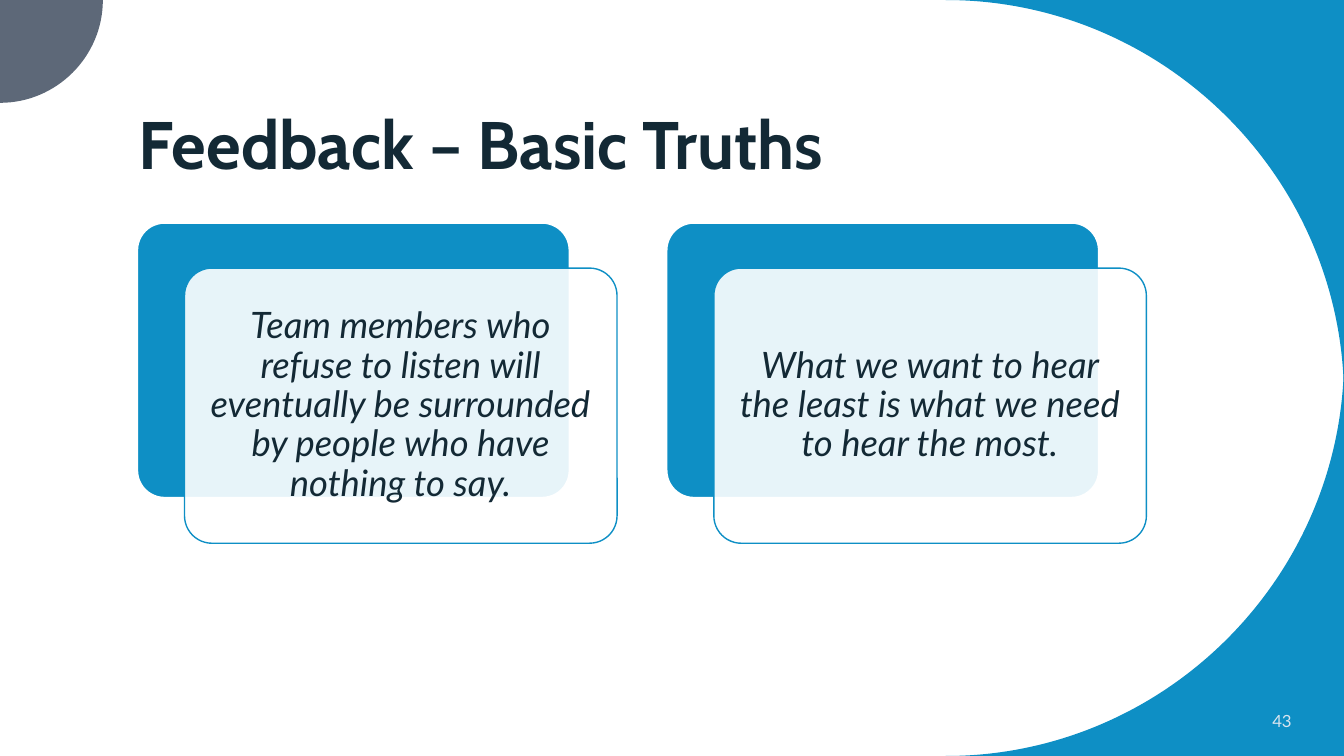
from lxml import etree
from pptx import Presentation
from pptx.dml import color
from pptx.enum import shapes, text
from pptx.oxml import ns
from pptx.util import Inches, Pt

BLUE, GREY, NAVY, PALE, WHITE = "0E8FC5", "5D6878", "132935", "DAE5EF", "FFFFFF"
WIDE, HIGH = 13.33, 7.5
BEND = 0.55
TRUTHS = [
    "Team members who refuse to listen will eventually be surrounded "
    "by people who have nothing to say.",
    "What we want to hear the least is what we need to hear the most.",
]


def rgb(code):
    return color.RGBColor.from_string(code)


def assign(item, values):
    for name, value in values.items():
        setattr(item, name, value)


def paint(shape, code):
    shape.shadow.inherit = False
    shape.fill.solid()
    shape.fill.fore_color.rgb = rgb(code)


def add_arc(slide, corner, first, last, peak, code):
    def point(spot):
        return tuple(map(Inches, spot))

    def pull(end):
        return point(e + BEND * (p - e) for e, p in zip(end, peak))

    draft = slide.shapes.build_freeform(*point(corner))
    draft.add_line_segments([point(first), point(last)], close=True)
    shape = draft.convert_to_shape()
    paint(shape, code)
    shape.line.fill.background()

    side = shape._element.findall(".//" + ns.qn("a:lnTo"))[1]
    side.tag = ns.qn("a:cubicBezTo")
    for place, (x, y) in enumerate((pull(first), pull(last))):
        spot = etree.Element(ns.qn("a:pt"), x=str(x - shape.left), y=str(y - shape.top))
        side.insert(place, spot)


def add_panel(slide, box, code, edge, width, alpha=100):
    shape = slide.shapes.add_shape(
        shapes.MSO_SHAPE.ROUNDED_RECTANGLE, *map(Inches, box))
    shape.adjustments[0] = 0.1
    paint(shape, code)
    shape.line.color.rgb = rgb(edge)
    shape.line.width = Pt(width)
    if alpha < 100:
        tint = shape._element.spPr.find(ns.qn("a:solidFill"))[0]
        etree.SubElement(tint, ns.qn("a:alpha"), val=str(alpha * 1000))


def add_words(slide, box, words, frame, para, font, code):
    body = slide.shapes.add_textbox(*map(Inches, box)).text_frame
    assign(body, {"word_wrap": True, **frame})
    line = body.paragraphs[0]
    assign(line, para)
    run = line.add_run()
    run.text = words
    assign(run.font, font)
    run.font.color.rgb = rgb(code)


def add_card(slide, left, words):
    top, width, height = 2.21, 4.29, 2.73
    add_panel(slide, (left, top, width, height), BLUE, WHITE, 1.5)
    left, top = left + 0.47, top + 0.45
    add_panel(slide, (left, top, width, height), WHITE, BLUE, 1, 90)
    pad = 0.08
    sides = ("margin_left", "margin_top", "margin_right", "margin_bottom")
    add_words(
        slide, (left + pad, top + pad, width - 2 * pad, height - 2 * pad), words,
        {"vertical_anchor": text.MSO_ANCHOR.MIDDLE,
         **dict.fromkeys(sides, Inches(0.11))},
        {"alignment": text.PP_ALIGN.CENTER, "line_spacing": 0.9},
        {"name": "Lato", "size": Pt(26), "italic": True}, NAVY)


def main():
    deck = Presentation()
    assign(deck, {"slide_width": Inches(WIDE), "slide_height": Inches(HIGH)})
    slide = deck.slides.add_slide(deck.slide_layouts[6])

    size, dot = 3.95, 1.02
    for edge, inner in ((0, size), (HIGH, HIGH - size)):
        add_arc(slide, (WIDE, edge), (WIDE - size, edge), (WIDE, inner),
                (WIDE, edge), BLUE)
    add_arc(slide, (0, 0), (dot, 0), (0, dot), (dot, dot), GREY)

    add_words(slide, (1.28, 0.42, 10.69, 1.45), "Feedback – Basic Truths",
              {"vertical_anchor": text.MSO_ANCHOR.BOTTOM},
              {"line_spacing": 0.9},
              {"name": "Cabin", "size": Pt(48), "bold": True}, NAVY)
    add_words(slide, (11.1, 6.95, 1.81, 0.4), "43",
              {"vertical_anchor": text.MSO_ANCHOR.MIDDLE},
              {"alignment": text.PP_ALIGN.RIGHT, "space_after": Pt(6)},
              {"name": "Lato", "size": Pt(12)}, PALE)
    for place, words in enumerate(TRUTHS):
        add_card(slide, 1.36 + 5.25 * place, words)

    deck.save("out.pptx")


if __name__ == "__main__":
    main()
